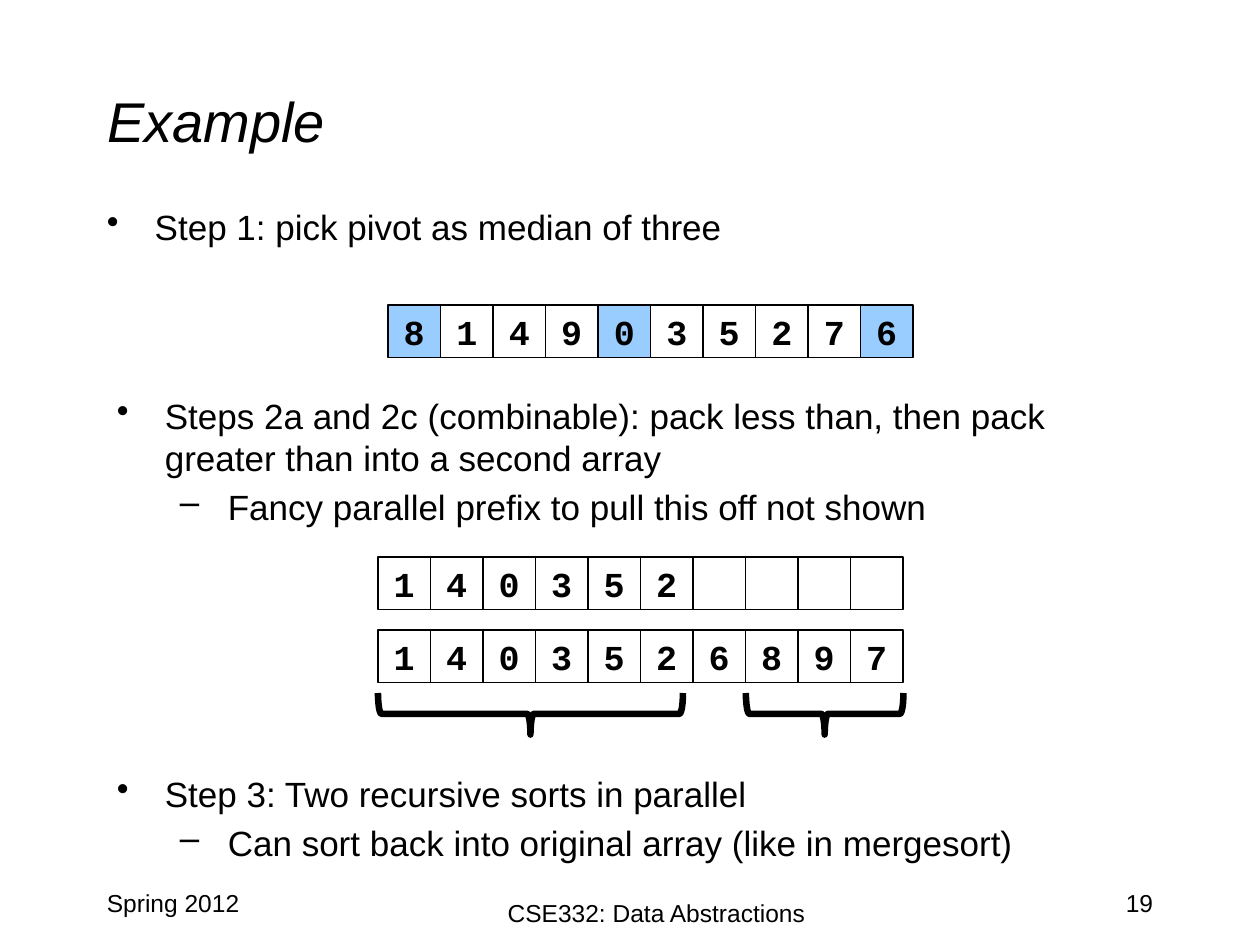
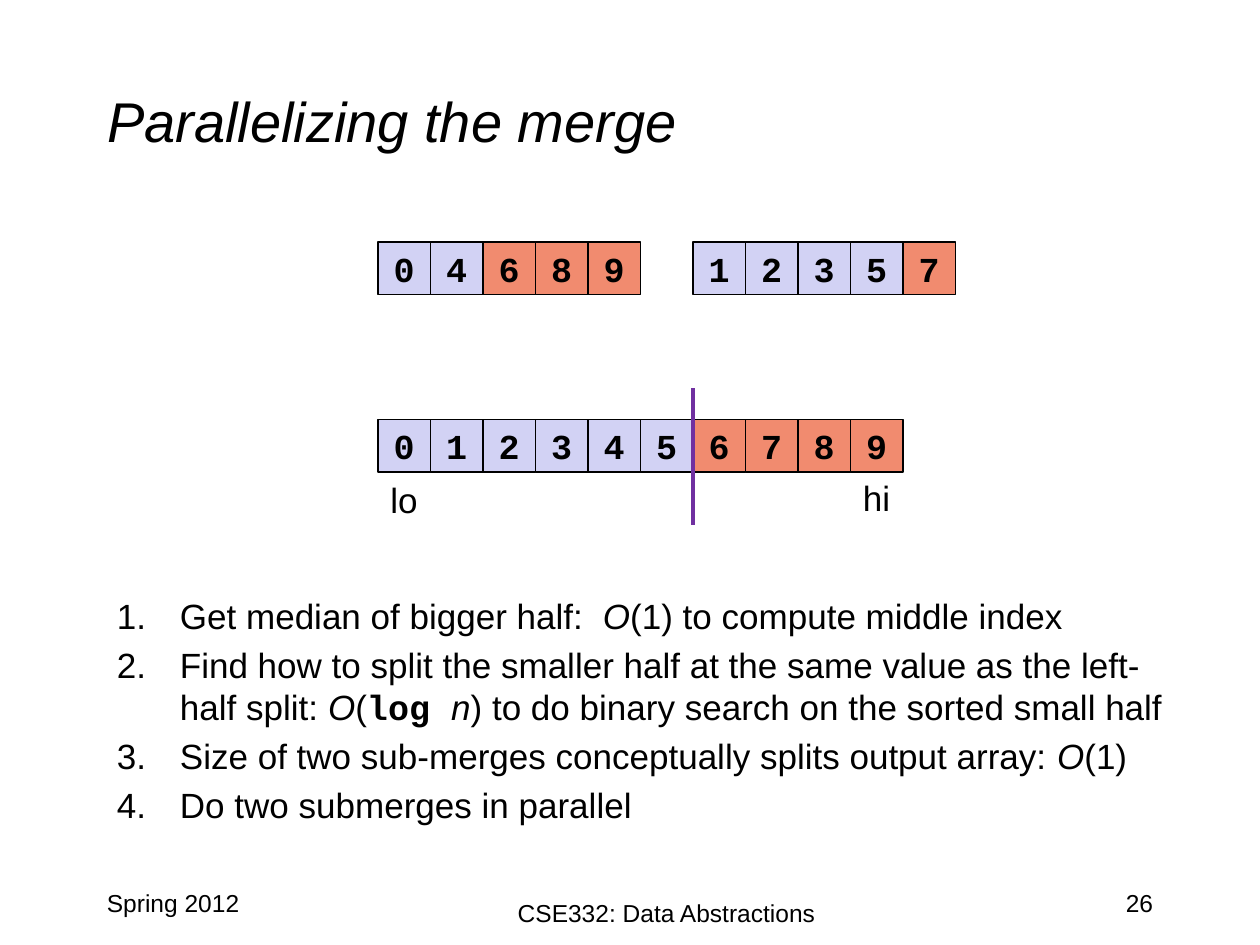
from dataclasses import dataclass
from typing import NamedTuple

from lxml import etree
from pptx import Presentation
from pptx.dml.color import RGBColor
from pptx.enum.shapes import MSO_CONNECTOR, MSO_SHAPE
from pptx.enum.text import MSO_ANCHOR, MSO_AUTO_SIZE, PP_ALIGN
from pptx.oxml.ns import qn
from pptx.util import Inches, Pt

LEFT, CENTER, RIGHT = PP_ALIGN.LEFT, PP_ALIGN.CENTER, PP_ALIGN.RIGHT
TOP, MIDDLE = MSO_ANCHOR.TOP, MSO_ANCHOR.MIDDLE
FIXED_SIZE = MSO_AUTO_SIZE.NONE
RECTANGLE, LEFT_BRACE = MSO_SHAPE.RECTANGLE, MSO_SHAPE.LEFT_BRACE
STRAIGHT = MSO_CONNECTOR.STRAIGHT
TITLE_ONLY = 5


@dataclass(frozen=True)
class Theme:
    text_font: str = "Arial"
    code_font: str = "Courier New"
    title_size: int = 32
    body_size: int = 20
    footer_size: int = 14
    paragraph_gap: int = 4
    ink: str = "000000"
    pivot: str = "99CCFF"
    low: str = "D2D2F4"
    high: str = "F18B6F"
    split: str = "7030A0"
    cell_line: float = 0.75
    split_line: float = 2.25
    brace_line: float = 3.75


THEME = Theme()
CELL = Inches(5) // 12
BRACE_DEPTH = Inches(0.33)

TITLE_FORMAT = {"name": THEME.text_font, "size": Pt(THEME.title_size), "italic": True}
BODY_FORMAT = {"name": THEME.text_font, "size": Pt(THEME.body_size)}
FOOTER_FORMAT = {"name": THEME.text_font, "size": Pt(THEME.footer_size)}
CELL_FORMAT = {"name": THEME.code_font, "size": Pt(THEME.body_size), "bold": True}
ITALIC = {"italic": True}
CODE = {"name": THEME.code_font, "bold": True}


class Box(NamedTuple):
    left: float
    top: float
    width: float
    height: float

    def lengths(self) -> list:
        return [Inches(value) for value in self]


class Run(NamedTuple):
    text: str
    changes: dict = {}


class Marker(NamedTuple):
    tag: str
    attribute: str
    value: str
    margin: float
    hanging: float
    level: int = 0


class Item(NamedTuple):
    marker: Marker
    runs: list


class CellRow(NamedTuple):
    """Values of an array, one letter a cell; fills names a colour by cell index."""
    left: float
    top: float
    values: str
    fills: dict = {}


class Brace(NamedTuple):
    left: float
    top: float
    width: float


class Label(NamedTuple):
    text: str
    box: Box


BULLET = Marker("a:buChar", "char", "•", 0.38, 0.38)
DASH = Marker("a:buChar", "char", "–", 0.88, 0.38, 1)
NUMBER = Marker("a:buAutoNum", "type", "arabicPeriod", 0.5, 0.5)

TITLE_BOX = Box(0.75, 0.33, 8.5, 1.25)
DATE_BOX = Box(0.75, 7, 2.08, 0.5)
NUMBER_BOX = Box(7.17, 7, 2.08, 0.5)


def apply_format(target, values: dict) -> None:
    for name, value in values.items():
        setattr(target, name, value)


def add_run(paragraph, text: str, values: dict) -> None:
    run = paragraph.add_run()
    run.text = text
    apply_format(run.font, values)
    run.font.color.rgb = RGBColor.from_string(THEME.ink)


def format_frame(frame, anchor=TOP, wrap: bool = True) -> None:
    apply_format(frame, {"word_wrap": wrap, "auto_size": FIXED_SIZE,
                         "vertical_anchor": anchor})


def add_text(slide, text: str, box: Box, values: dict, alignment=LEFT,
             wrap: bool = True) -> None:
    frame = slide.shapes.add_textbox(*box.lengths()).text_frame
    format_frame(frame, wrap=wrap)
    paragraph = frame.paragraphs[0]
    paragraph.alignment = alignment
    add_run(paragraph, text, values)


def set_marker(paragraph, marker: Marker) -> None:
    properties = paragraph._p.get_or_add_pPr()
    properties.set("marL", str(Inches(marker.margin)))
    properties.set("indent", str(-Inches(marker.hanging)))
    bullet = etree.SubElement(properties, qn(marker.tag))
    bullet.set(marker.attribute, marker.value)


def add_list(slide, box: Box, items: list[Item]) -> None:
    frame = slide.shapes.add_textbox(*box.lengths()).text_frame
    format_frame(frame)
    for index, item in enumerate(items):
        paragraph = frame.add_paragraph() if index else frame.paragraphs[0]
        apply_format(paragraph, {"level": item.marker.level,
                                 "space_before": Pt(THEME.paragraph_gap)})
        set_marker(paragraph, item.marker)
        for run in item.runs:
            add_run(paragraph, run.text, BODY_FORMAT | run.changes)


def set_line(line, color: str, width: float) -> None:
    line.color.rgb = RGBColor.from_string(color)
    line.width = Pt(width)


def add_cells(slide, row: CellRow) -> None:
    for index, value in enumerate(row.values):
        cell = slide.shapes.add_shape(RECTANGLE, Inches(row.left) + index * CELL,
                                      Inches(row.top), CELL, CELL)
        cell.shadow.inherit = False
        set_line(cell.line, THEME.ink, THEME.cell_line)
        if index in row.fills:
            cell.fill.solid()
            cell.fill.fore_color.rgb = RGBColor.from_string(row.fills[index])
        else:
            cell.fill.background()
        if value.strip():
            format_frame(cell.text_frame, MIDDLE, wrap=False)
            paragraph = cell.text_frame.paragraphs[0]
            paragraph.alignment = CENTER
            add_run(paragraph, value, CELL_FORMAT)


def add_brace(slide, brace: Brace) -> None:
    """Draw a brace under a span; it is turned about its centre to point down."""
    span = Inches(brace.width)
    shift = (span - BRACE_DEPTH) // 2
    shape = slide.shapes.add_shape(LEFT_BRACE, Inches(brace.left) + shift,
                                   Inches(brace.top) - shift, BRACE_DEPTH, span)
    shape.rotation = 270
    shape.shadow.inherit = False
    shape.fill.background()
    set_line(shape.line, THEME.ink, THEME.brace_line)


def add_split(slide, x: float, top: float, bottom: float) -> None:
    connector = slide.shapes.add_connector(STRAIGHT, Inches(x), Inches(top),
                                           Inches(x), Inches(bottom))
    set_line(connector.line, THEME.split, THEME.split_line)
    etree.SubElement(connector._element.spPr, qn("a:effectLst"))


def add_slide(presentation, title: str, number: int, course_left: float):
    """Add a slide with its title and the three footer texts."""
    slide = presentation.slides.add_slide(presentation.slide_layouts[TITLE_ONLY])
    placeholder = slide.shapes.title
    apply_format(placeholder, dict(zip(TITLE_BOX._fields, TITLE_BOX.lengths())))
    format_frame(placeholder.text_frame, MIDDLE)
    paragraph = placeholder.text_frame.paragraphs[0]
    paragraph.alignment = LEFT
    add_run(paragraph, title, TITLE_FORMAT)
    add_text(slide, "Spring 2012", DATE_BOX, FOOTER_FORMAT)
    add_text(slide, "CSE332: Data Abstractions", Box(course_left, 7.08, 4.42, 0.5),
             FOOTER_FORMAT, CENTER)
    add_text(slide, str(number), NUMBER_BOX, FOOTER_FORMAT, RIGHT)
    return slide


def fill_by_split(low_count: int, count: int) -> dict:
    return {index: THEME.low if index < low_count else THEME.high
            for index in range(count)}


def build_example(presentation) -> None:
    slide = add_slide(presentation, "Example", 19, 3)
    add_list(slide, Box(0.75, 1.58, 8.5, 0.5), [
        Item(BULLET, [Run("Step 1: pick pivot as median of three")]),
    ])
    add_list(slide, Box(0.83, 3.08, 8.5, 1.17), [
        Item(BULLET, [Run("Steps 2a and 2c (combinable): pack less than, then pack "
                          "greater than into a second array")]),
        Item(DASH, [Run("Fancy parallel prefix to pull this off not shown")]),
    ])
    add_list(slide, Box(0.83, 6.08, 8.5, 0.83), [
        Item(BULLET, [Run("Step 3: Two recursive sorts in parallel")]),
        Item(DASH, [Run("Can sort back into original array (like in mergesort)")]),
    ])
    for row in (
        CellRow(3.08, 2.42, "8149035276", dict.fromkeys((0, 4, 9), THEME.pivot)),
        CellRow(3, 4.42, "140352".ljust(10)),
        CellRow(3, 5, "1403526897"),
    ):
        add_cells(slide, row)
    for brace in (Brace(3, 5.5, 2.42), Brace(5.92, 5.5, 1.25)):
        add_brace(slide, brace)


def build_merge(presentation) -> None:
    slide = add_slide(presentation, "Parallelizing the merge", 26, 3.08)
    for row in (
        CellRow(3, 1.92, "04689", fill_by_split(2, 5)),
        CellRow(5.5, 1.92, "12357", fill_by_split(4, 5)),
        CellRow(3, 3.33, "0123456789", fill_by_split(6, 10)),
    ):
        add_cells(slide, row)
    for label in (Label("lo", Box(3, 3.75, 0.42, 0.44)),
                  Label("hi", Box(6.75, 3.73, 0.42, 0.44))):
        add_text(slide, label.text, label.box, BODY_FORMAT, wrap=False)
    add_split(slide, 5.5, 3.08, 4.17)
    order = Run("O", ITALIC)
    add_list(slide, Box(0.83, 4.67, 8.67, 1.92), [
        Item(NUMBER, [Run("Get median of bigger half:  "), order,
                      Run("(1) to compute middle index")]),
        Item(NUMBER, [Run("Find how to split the smaller half at the same value "
                          "as the left-half split: "), order, Run("("),
                      Run("log ", CODE), Run("n", ITALIC),
                      Run(") to do binary search on the sorted small half")]),
        Item(NUMBER, [Run("Size of two sub-merges conceptually splits output array: "),
                      order, Run("(1)")]),
        Item(NUMBER, [Run("Do two submerges in parallel")]),
    ])


def main() -> None:
    presentation = Presentation()
    presentation.slide_width = Inches(10)
    presentation.slide_height = Inches(7.5)
    build_example(presentation)
    build_merge(presentation)
    presentation.save("out.pptx")


if __name__ == "__main__":
    main()
